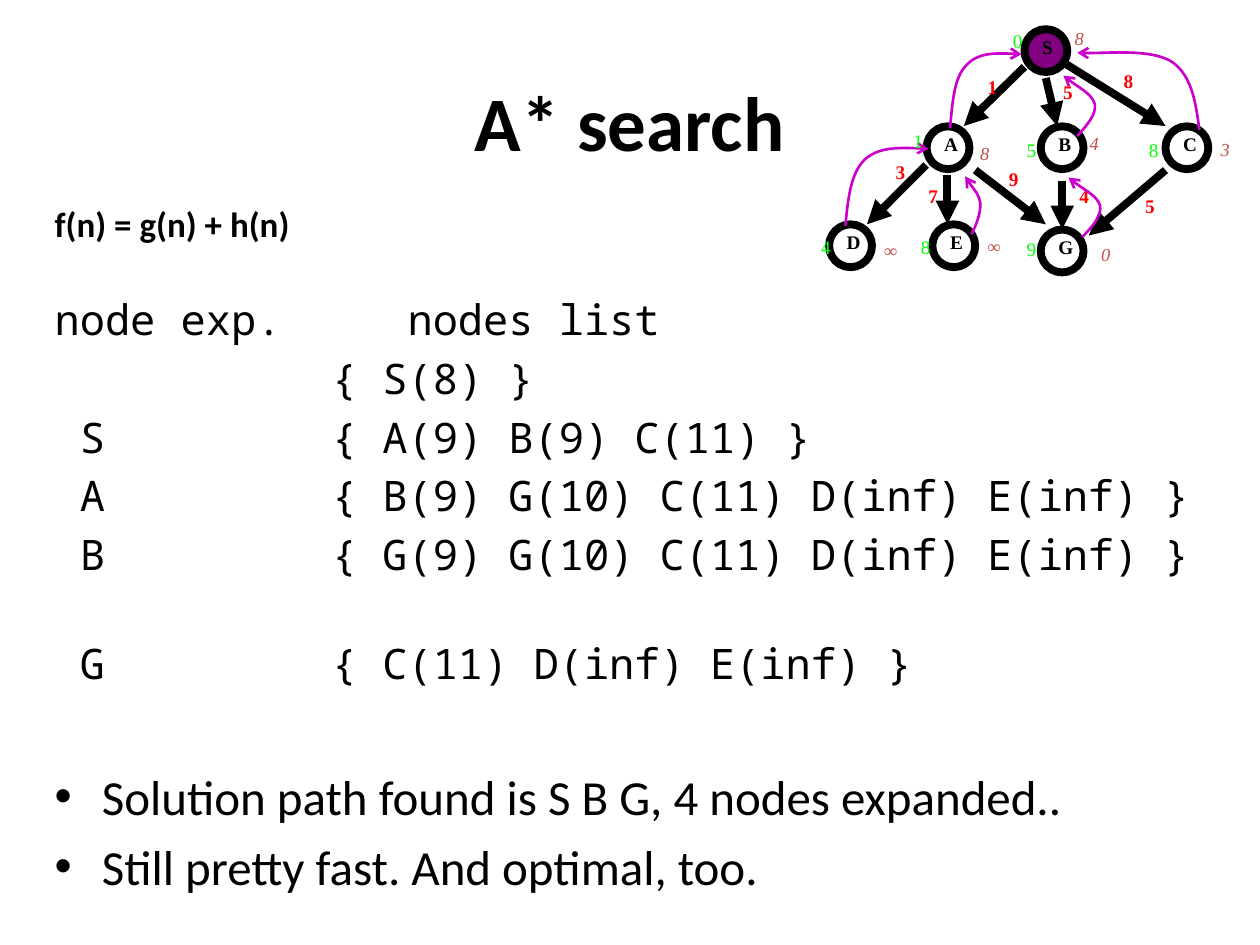
from dataclasses import dataclass

from lxml import etree
from pptx import Presentation
from pptx.dml.color import RGBColor
from pptx.enum import shapes, text
from pptx.oxml import ns
from pptx.util import Pt


@dataclass(frozen=True)
class Theme:
    body_font: str = "Calibri"
    code_font: str = "Noto Sans Mono"
    graph_font: str = "Times New Roman"
    ink: str = "000000"
    start_fill: str = "800080"
    cost: str = "FF0000"
    heuristic: str = "C0504D"
    path_cost: str = "00FF00"
    back_pointer: str = "CC00CC"
    title_size: float = 44
    formula_size: float = 20
    code_size: float = 24
    bullet_size: float = 28
    label_size: float = 11
    heuristic_size: float = 10.5
    edge_width: float = 4.5
    pointer_width: float = 1.5


NODE_SIZE = 24.5
NODES = {"S": (585.4, 16.7), "C": (666, 72.2), "B": (594.7, 72.2), "A": (529.5, 72.2),
         "D": (473.8, 128.2), "G": (594.7, 131.2), "E": (532.8, 128.2)}
EDGES = [
    ((585.4, 38.2), (550.8, 72)), ((541.4, 100.1), (541.4, 128.2)),
    ((557.3, 97.2), (597.6, 128.2)), ((597.6, 44.6), (604.1, 72)),
    ((607, 35.3), (666, 72)), ((607, 103.7), (607, 131)),
    ((666, 97.2), (622.1, 134.6)), ((529.2, 94.3), (495.4, 128.2)),
]
EDGE_COSTS = [("1", 557.3, 39.6), ("5", 600.5, 42.5), ("8", 635, 36), ("9", 569.5, 92.2),
              ("4", 609.8, 101.5), ("5", 647.3, 107.3), ("3", 504.7, 87.8), ("7", 523.4, 101.5)]
HEURISTICS = [("8", 607, 12.2), ("8", 553, 77.8), ("4", 615.6, 72), ("3", 690.5, 75.6),
              ("∞", 557.3, 131), ("∞", 498.2, 133.2), ("0", 622.1, 135.4)]
PATH_COSTS = [("0", 571.7, 13), ("1", 514.8, 70.6), ("4", 462.2, 131), ("8", 519.1, 131),
              ("9", 579.6, 131.8), ("8", 649.4, 75.6), ("5", 579.6, 75.6)]
# Each back pointer is a start point followed by two cubic Bézier segments.
BACK_POINTERS = [
    [(542.9, 73.4), (544.3, 59), (545, 44.6), (552.2, 37.4),
     (558.7, 30.2), (571.7, 30.2), (583.9, 31)],
    [(483.1, 128.9), (484.6, 113.8), (486, 99.4), (493.9, 91.4),
     (501.8, 84.2), (516.2, 84.2), (530.6, 85)],
    [(555.1, 133.9), (558, 128.2), (560.2, 122.4), (560.2, 116.6),
     (559.4, 110.9), (553, 103.7), (551.5, 100.8)],
    [(618.5, 135.4), (624.2, 129.6), (630, 123.1), (628.6, 117.4),
     (627.1, 112.3), (613.4, 104.4), (610.6, 101.5)],
    [(615.6, 77.8), (621.4, 71.3), (626.4, 65.5), (625.7, 59.8),
     (624.2, 54), (610.6, 46.1), (607.7, 43.2)],
    [(685.4, 74.2), (683.3, 58.3), (681.1, 43.2), (669.6, 35.3),
     (658.1, 28.1), (625, 31), (615.6, 30.2)],
]
HEADER_COLUMN = 14
LIST_COLUMN = 11
# Expanded node, nodes list, column of the list in characters, space before
TRACE = [
    ("node exp.", "nodes list", HEADER_COLUMN, 28.5),
    ("", "{ S(8) }", LIST_COLUMN, 4.8),
    (" S", "{ A(9) B(9) C(11) }", LIST_COLUMN, 4.8),
    (" A", "{ B(9) G(10) C(11) D(inf) E(inf) }", LIST_COLUMN, 4.8),
    (" B", "{ G(9) G(10) C(11) D(inf) E(inf) }", LIST_COLUMN, 4.8),
    (" G", "{ C(11) D(inf) E(inf) }", LIST_COLUMN, 33.5),
]
CONCLUSIONS = [("Solution path found is S B G, 4 nodes expanded..", 45),
               ("Still pretty fast. And optimal, too.", 6.2)]


class SlideBuilder:
    """Holds the theme and the slide being filled."""

    def __init__(self, slide, theme):
        self.slide = slide
        self.theme = theme

    def format_text(self, paragraph, font, size, color, bold=False, italic=False):
        for run in paragraph.runs:
            run.font.name = font
            run.font.size = Pt(size)
            run.font.bold = bold
            run.font.italic = italic
            run.font.color.rgb = RGBColor.from_string(color)

    def place(self, shape, left, top, width, height):
        shape.left, shape.top = Pt(left), Pt(top)
        shape.width, shape.height = Pt(width), Pt(height)

    def title(self, words):
        shape = self.slide.shapes.title
        self.place(shape, 54, 24, 612, 90)
        shape.text_frame.text = words
        self.format_text(shape.text_frame.paragraphs[0], self.theme.body_font,
                         self.theme.title_size, self.theme.ink, bold=True)

    def body(self, formula, trace, conclusions):
        theme = self.theme
        shape = self.slide.placeholders[1]
        self.place(shape, 24, 108, 696, 324)
        frame = shape.text_frame
        frame.auto_size = text.MSO_AUTO_SIZE.NONE
        frame.text = formula
        paragraph = frame.paragraphs[0]
        paragraph.space_before = Pt(0)
        paragraph.line_spacing = Pt(28)
        self.remove_bullet(paragraph)
        self.format_text(paragraph, theme.body_font, theme.formula_size, theme.ink, bold=True)
        for node, nodes_list, column, gap in trace:
            paragraph = self.body_line(frame, node.ljust(column) + nodes_list, gap,
                                       theme.code_font, theme.code_size)
            paragraph.line_spacing = Pt(28.7)
            self.remove_bullet(paragraph)
        for words, gap in conclusions:
            self.body_line(frame, words, gap, theme.body_font, theme.bullet_size)

    def body_line(self, frame, words, gap, font, size):
        paragraph = frame.add_paragraph()
        paragraph.text = words
        paragraph.space_before = Pt(gap)
        self.format_text(paragraph, font, size, self.theme.ink)
        return paragraph

    def remove_bullet(self, paragraph):
        properties = paragraph._p.get_or_add_pPr()
        properties.set("marL", "0")
        properties.set("indent", "0")
        etree.SubElement(properties, ns.qn("a:buNone"))

    def label(self, words, left, top, color, size, bold=False, italic=False):
        shape = self.slide.shapes.add_textbox(Pt(left), Pt(top), Pt(20), Pt(19.5))
        frame = shape.text_frame
        frame.word_wrap = False
        frame.auto_size = text.MSO_AUTO_SIZE.SHAPE_TO_FIT_TEXT
        frame.text = words
        self.format_text(frame.paragraphs[0], self.theme.graph_font, size, color, bold, italic)

    def node(self, name, left, top, fill=None):
        shape = self.slide.shapes.add_shape(shapes.MSO_SHAPE.OVAL, Pt(left), Pt(top),
                                            Pt(NODE_SIZE), Pt(NODE_SIZE))
        shape.shadow.inherit = False
        if fill:
            shape.fill.solid()
            shape.fill.fore_color.rgb = RGBColor.from_string(fill)
        else:
            shape.fill.background()
        self.stroke(shape, self.theme.ink, self.theme.edge_width)
        self.label(name, left + 3, top, self.theme.ink, self.theme.label_size, bold=True)

    def stroke(self, shape, color, width, arrowhead=None):
        shape.line.color.rgb = RGBColor.from_string(color)
        shape.line.width = Pt(width)
        if arrowhead:
            etree.SubElement(shape.line._get_or_add_ln(), ns.qn("a:tailEnd"), type=arrowhead)

    def edge(self, start, end):
        connector = self.slide.shapes.add_connector(
            shapes.MSO_CONNECTOR.STRAIGHT, *(Pt(value) for value in start + end))
        self.stroke(connector, self.theme.ink, self.theme.edge_width, "triangle")
        etree.SubElement(connector._element.spPr, ns.qn("a:effectLst"))

    def back_pointer(self, controls):
        """Build a freeform on the control points, then merge each three into a curve."""
        (start_x, start_y), *rest = controls
        builder = self.slide.shapes.build_freeform(Pt(start_x), Pt(start_y))
        builder.add_line_segments([(Pt(x), Pt(y)) for x, y in rest], close=False)
        shape = builder.convert_to_shape()
        lines = list(shape._element.iter(ns.qn("a:lnTo")))
        outline = lines[0].getparent()
        for first in range(0, len(lines), 3):
            curve = etree.SubElement(outline, ns.qn("a:cubicBezTo"))
            for line in lines[first:first + 3]:
                curve.append(line[0])
                outline.remove(line)
        shape.shadow.inherit = False
        shape.fill.background()
        self.stroke(shape, self.theme.back_pointer, self.theme.pointer_width, "arrow")


def main():
    theme = Theme()
    presentation = Presentation()
    presentation.slide_width, presentation.slide_height = Pt(720), Pt(540)
    builder = SlideBuilder(presentation.slides.add_slide(presentation.slide_layouts[1]), theme)
    builder.title("A* search")
    builder.body("f(n) = g(n) + h(n)", TRACE, CONCLUSIONS)
    for name, (left, top) in NODES.items():
        builder.node(name, left, top, theme.start_fill if name == "S" else None)
    for start, end in EDGES:
        builder.edge(start, end)
    for label in EDGE_COSTS:
        builder.label(*label, theme.cost, theme.label_size, bold=True)
    for label in HEURISTICS:
        builder.label(*label, theme.heuristic, theme.heuristic_size, italic=True)
    for controls in BACK_POINTERS:
        builder.back_pointer(controls)
    for label in PATH_COSTS:
        builder.label(*label, theme.path_cost, theme.label_size)
    presentation.save("out.pptx")


if __name__ == "__main__":
    main()
